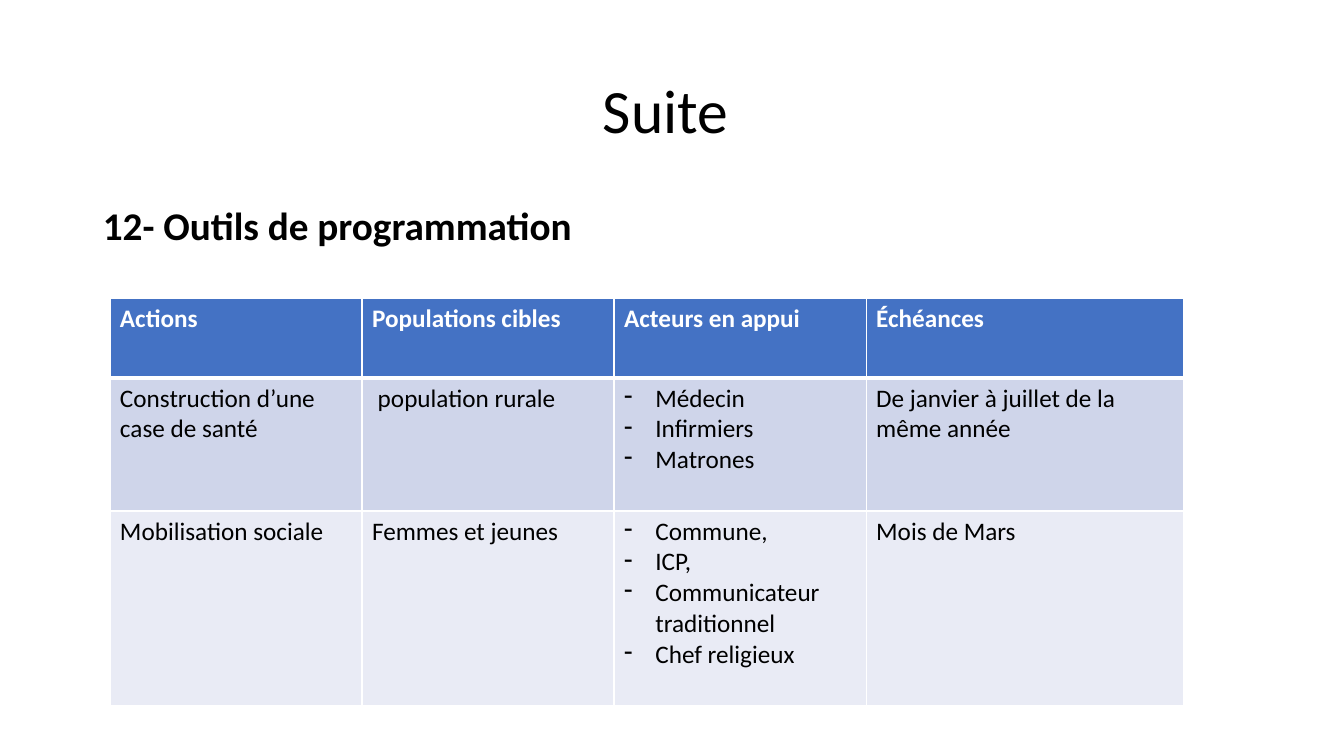
from lxml import etree
from pptx import Presentation
from pptx.dml.color import RGBColor
from pptx.enum.text import MSO_ANCHOR, MSO_AUTO_SIZE, PP_ALIGN
from pptx.oxml.ns import qn
from pptx.util import Inches, Pt

CENTER, LEFT = PP_ALIGN.CENTER, PP_ALIGN.LEFT
MIDDLE, TOP = MSO_ANCHOR.MIDDLE, MSO_ANCHOR.TOP
NO_AUTOFIT = MSO_AUTO_SIZE.NONE

BLACK, WHITE, BLUE = "000000", "FFFFFF", "4472C4"
ROW_FILLS = [BLUE, "CFD5EA", "E9EBF5"]
COLUMN_WIDTHS = [2.5, 2.5, 2.5, 3.15]
ROW_HEIGHTS = [0.79, 1.32, 1.93]
MARGIN, CONTENT_WIDTH = 0.92, 11.5
ROWS = [
    ["Actions", "Populations cibles", "Acteurs en appui", "Échéances"],
    ["Construction d’une case de santé", " population rurale",
     ["Médecin", "Infirmiers", "Matrones"],
     "De janvier à juillet de la même année"],
    ["Mobilisation sociale", "Femmes et jeunes",
     ["Commune,", "ICP,", "Communicateur traditionnel", "Chef religieux"],
     "Mois de Mars"],
]


def write(paragraph, text, size=18, color=BLACK, bold=False, align=LEFT,
          spacing=1.0, before=0, bullet=None):
    """Fill a paragraph with one formatted run, with or without a bullet."""
    paragraph.alignment = align
    paragraph.line_spacing = spacing
    paragraph.space_before = Pt(before)
    properties = paragraph._p.get_or_add_pPr()
    indent = Inches(0.31) if bullet else 0
    properties.set("marL", str(indent))
    properties.set("indent", str(-indent))
    if bullet:
        etree.SubElement(properties, qn("a:buChar"), char=bullet)
    else:
        etree.SubElement(properties, qn("a:buNone"))
    run = paragraph.add_run()
    run.text = text
    run.font.name = "Calibri"
    run.font.size = Pt(size)
    run.font.bold = bold
    run.font.color.rgb = RGBColor.from_string(color)


def add_border(cell, side, width):
    """Draw one white cell border; call before filling the cell."""
    line = etree.SubElement(cell._tc.get_or_add_tcPr(), qn("a:ln" + side),
                            w=str(Pt(width)))
    fill = etree.SubElement(line, qn("a:solidFill"))
    etree.SubElement(fill, qn("a:srgbClr"), val=WHITE)


presentation = Presentation()
presentation.slide_width = Inches(13.33)
presentation.slide_height = Inches(7.5)
slide = presentation.slides.add_slide(presentation.slide_layouts[1])

# Title and heading
title, body = slide.shapes.title, slide.placeholders[1]
for shape, top, height, anchor in [(title, 0.4, 1.45, MIDDLE),
                                   (body, 2, 4.76, TOP)]:
    shape.left, shape.top = Inches(MARGIN), Inches(top)
    shape.width, shape.height = Inches(CONTENT_WIDTH), Inches(height)
    shape.text_frame.auto_size = NO_AUTOFIT
    shape.text_frame.vertical_anchor = anchor
write(title.text_frame.paragraphs[0], "Suite ", size=44, align=CENTER,
      spacing=0.9)
write(body.text_frame.paragraphs[0], "12- Outils de programmation", size=28,
      bold=True, spacing=0.9, before=10)

# Planning table
table = slide.shapes.add_table(
    len(ROWS), len(COLUMN_WIDTHS), Inches(1.09), Inches(2.96),
    Inches(sum(COLUMN_WIDTHS)), Inches(sum(ROW_HEIGHTS))).table
for column, width in zip(table.columns, COLUMN_WIDTHS):
    column.width = Inches(width)
for row, height in zip(table.rows, ROW_HEIGHTS):
    row.height = Inches(height)

for row_index, contents in enumerate(ROWS):
    header = row_index == 0
    for column_index, content in enumerate(contents):
        cell = table.cell(row_index, column_index)
        for side in "LRTB":
            thick = (row_index, side) in [(0, "B"), (1, "T")]
            add_border(cell, side, 3 if thick else 1)
        cell.fill.solid()
        cell.fill.fore_color.rgb = RGBColor.from_string(ROW_FILLS[row_index])
        listed = isinstance(content, list)
        for index, text in enumerate(content if listed else [content]):
            frame = cell.text_frame
            paragraph = frame.add_paragraph() if index else frame.paragraphs[0]
            write(paragraph, text, color=WHITE if header else BLACK,
                  bold=header, bullet="-" if listed else None)

presentation.save("out.pptx")
